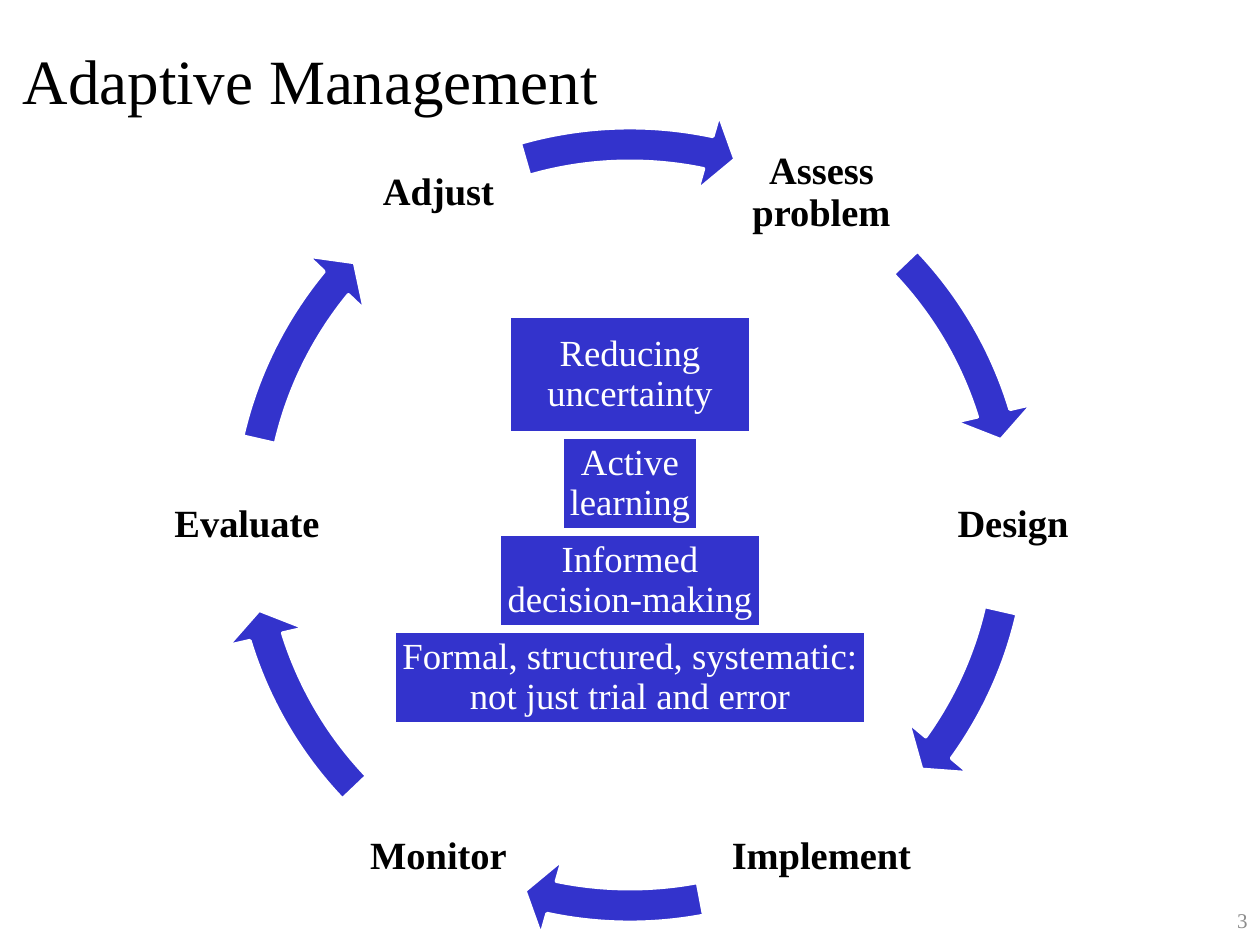
from dataclasses import dataclass
from math import cos, radians, sin

from pptx import Presentation
from pptx.dml.color import RGBColor
from pptx.enum.shapes import MSO_SHAPE
from pptx.enum.text import MSO_ANCHOR, MSO_AUTO_SIZE, PP_ALIGN
from pptx.util import Pt

EMU_PER_PX = 914400 / 126


@dataclass(frozen=True)
class Theme:
    font: str = "Times New Roman"
    ink: str = "000000"
    accent: str = "3333CC"
    paper: str = "FFFFFF"
    muted: str = "8C8C8C"
    title_size: int = 36
    stage_size: int = 22
    goal_size: int = 21
    number_size: int = 12
    outline: int = 2


THEME = Theme()

CENTER_X, CENTER_Y = 630, 525
LABEL_RADIUS = 383
LABEL_SIZE = 171
RING_SIZE = 840

# Stage, label width, and the start and end angle of the arrow that leaves it
STAGES = [
    ("Assess problem", LABEL_SIZE, 316.37, 342.9),
    ("Design", LABEL_SIZE, 12.93, 35.79),
    ("Implement", 241, 79.29, 101.86),
    ("Monitor", LABEL_SIZE, 136.37, 162.9),
    ("Evaluate", LABEL_SIZE, 192.93, 219.46),
    ("Adjust", LABEL_SIZE, 253.97, 281.86),
]

GOALS_TOP, GOAL_GAP = 316, 4
# Goal, box width, box height
GOALS = [
    ("Reducing uncertainty", 242, 117),
    ("Active learning", 136, 93),
    ("Informed decision-making", 261, 93),
    ("Formal, structured, systematic: not just trial and error", 471, 93),
]


def px(length):
    return round(length * EMU_PER_PX)


def frame(*lengths):
    return [px(length) for length in lengths]


def set_all(target, values):
    for name, value in values.items():
        setattr(target, name, value)


def write(box, text, size, color, align=PP_ALIGN.CENTER, inset=None, spacing=0.9, bold=False):
    """Put one formatted, vertically centred paragraph into a shape."""
    body = box.text_frame
    set_all(body, {
        "word_wrap": True,
        "auto_size": MSO_AUTO_SIZE.NONE,
        "vertical_anchor": MSO_ANCHOR.MIDDLE,
    })
    if inset is not None:
        sides = ("left", "top", "right", "bottom")
        set_all(body, {f"margin_{side}": px(inset) for side in sides})
    para = body.paragraphs[0]
    set_all(para, {"alignment": align, "line_spacing": spacing})
    span = para.add_run()
    span.text = text
    set_all(span.font, {"name": THEME.font, "size": Pt(size), "bold": bold})
    span.font.color.rgb = RGBColor.from_string(color)


def paint(shape):
    shape.shadow.inherit = False
    shape.fill.solid()
    shape.fill.fore_color.rgb = RGBColor.from_string(THEME.accent)
    shape.line.color.rgb = RGBColor.from_string(THEME.paper)
    shape.line.width = Pt(THEME.outline)


def add_title(page, text):
    title = page.shapes.title
    set_all(title, dict(zip(("left", "top", "width", "height"), frame(10, 32, 1102, 94))))
    write(title, text, THEME.title_size, THEME.ink, align=PP_ALIGN.LEFT, spacing=1.0)


def add_stage_label(page, text, width, angle):
    """Centre a label on the cycle, at an angle clockwise from the right."""
    x = CENTER_X + LABEL_RADIUS * cos(radians(angle))
    y = CENTER_Y + LABEL_RADIUS * sin(radians(angle))
    box = page.shapes.add_textbox(
        *frame(x - width / 2, y - LABEL_SIZE / 2, width, LABEL_SIZE))
    write(box, text, THEME.stage_size, THEME.ink, inset=4, bold=True)


def add_cycle_arrow(page, start, end):
    half = RING_SIZE / 2
    arrow = page.shapes.add_shape(
        MSO_SHAPE.CIRCULAR_ARROW,
        *frame(CENTER_X - half, CENTER_Y - half, RING_SIZE, RING_SIZE))
    # Angles are stored in 60000ths of a degree, adjustments in 100000ths
    values = (0.04, 2.5, end * 0.6, start * 0.6, 0.047)
    for index, value in enumerate(values):
        arrow.adjustments[index] = value
    paint(arrow)


def add_goal(page, text, top, width, height):
    box = page.shapes.add_shape(
        MSO_SHAPE.RECTANGLE, *frame(CENTER_X - width / 2, top, width, height))
    paint(box)
    write(box, text, THEME.goal_size, THEME.paper, inset=7)


def add_page_number(page, number):
    box = page.shapes.add_textbox(*frame(1197, 895, 63, 50))
    write(box, number, THEME.number_size, THEME.muted, align=PP_ALIGN.RIGHT, spacing=1.0)


def main():
    deck = Presentation()
    set_all(deck, {"slide_width": px(1260), "slide_height": px(945)})
    page = deck.slides.add_slide(deck.slide_layouts.get_by_name("Title Only"))

    add_title(page, "Adaptive Management")
    step = 360 / len(STAGES)
    for index, (text, width, start, end) in enumerate(STAGES):
        add_stage_label(page, text, width, (index - 1) * step)
        add_cycle_arrow(page, start, end)

    top = GOALS_TOP
    for text, width, height in GOALS:
        add_goal(page, text, top, width, height)
        top += height + GOAL_GAP

    add_page_number(page, "3")
    deck.save("out.pptx")


if __name__ == "__main__":
    main()
